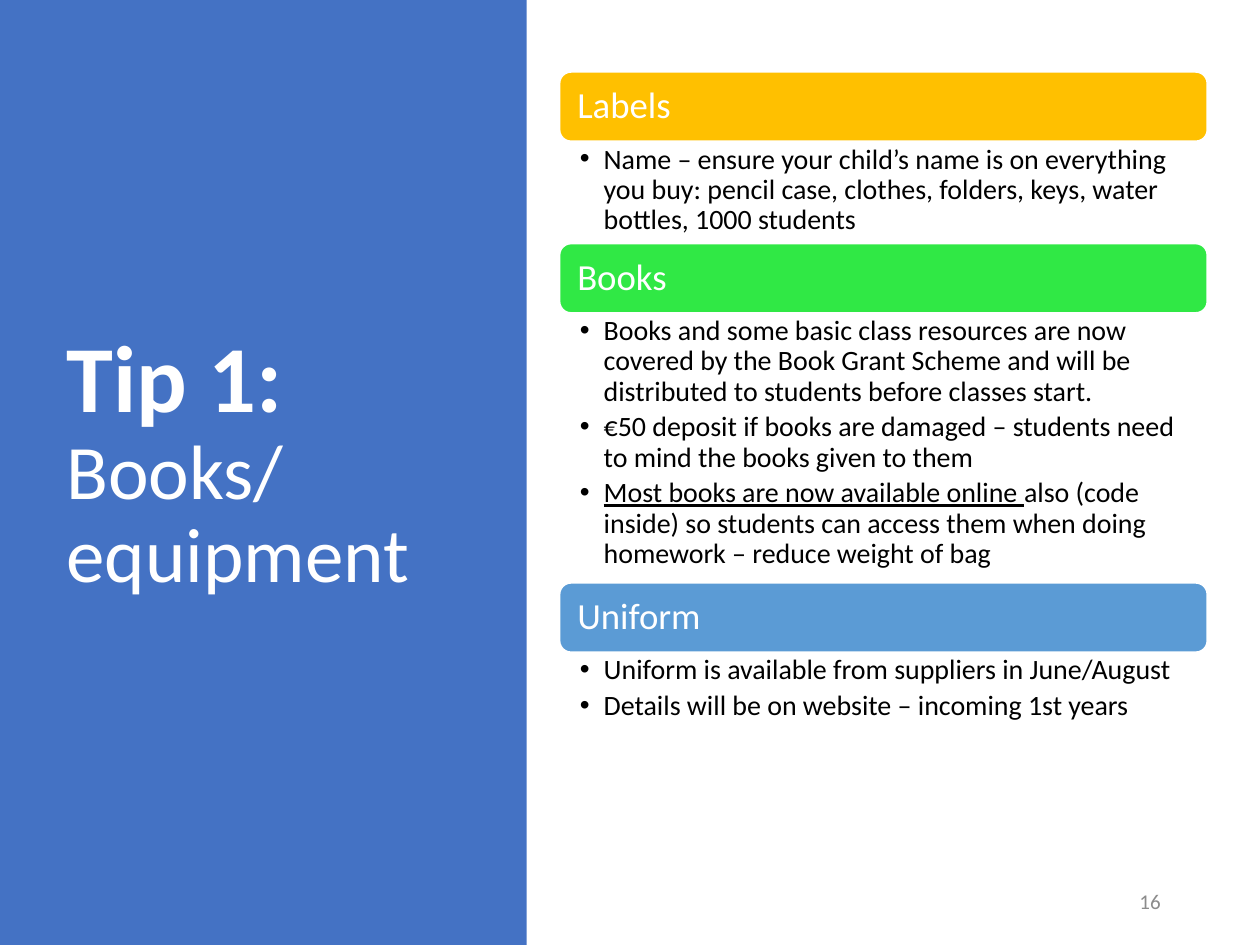
from pptx import Presentation
from pptx.dml.color import RGBColor
from pptx.enum.shapes import MSO_SHAPE
from pptx.enum.text import MSO_ANCHOR, MSO_AUTO_SIZE, PP_ALIGN
from pptx.oxml.ns import qn
from pptx.util import Cm, Pt
from lxml.etree import SubElement

FONT = "Calibri"
WHITE = RGBColor(0xFF, 0xFF, 0xFF)
BLACK = RGBColor(0x00, 0x00, 0x00)
GREY = RGBColor(0x8C, 0x8C, 0x8C)
PANEL_BLUE = RGBColor(0x44, 0x72, 0xC4)
AMBER = RGBColor(0xFF, 0xC0, 0x00)
GREEN = RGBColor(0x30, 0xE8, 0x45)
SKY_BLUE = RGBColor(0x5B, 0x9B, 0xD5)

HEADING_HEIGHT = Cm(1.4)
SECTIONS = [
    ("Labels", AMBER, Cm(2.06), [
        [("Name – ensure your child’s name is on everything you buy: pencil case, "
          "clothes, folders, keys, water bottles, 1000 students", False)],
    ]),
    ("Books", GREEN, Cm(5.44), [
        [("Books and some basic class resources are now covered by the Book Grant "
          "Scheme and will be distributed to students before classes start.", False)],
        [("€50 deposit if books are damaged – students need to mind the books "
          "given to them", False)],
        [("Most books are now available online ", True),
         ("also (code inside) so students can access them when doing homework – "
          "reduce weight of bag", False)],
    ]),
    ("Uniform", SKY_BLUE, Cm(3.07), [
        [("Uniform is available from suppliers in June/August", False)],
        [("Details will be on website – incoming 1st years", False)],
    ]),
]


def place(shape, left, top, width, height):
    shape.left, shape.top, shape.width, shape.height = left, top, width, height


def set_frame(frame, anchor, side, edge):
    frame.word_wrap = True
    frame.auto_size = MSO_AUTO_SIZE.NONE
    frame.vertical_anchor = anchor
    frame.margin_left = frame.margin_right = side
    frame.margin_top = frame.margin_bottom = edge


def add_run(paragraph, text, size, color, bold=False, underline=False):
    run = paragraph.add_run()
    run.text = text
    run.font.name = FONT
    run.font.size = Pt(size)
    run.font.bold = bold
    run.font.underline = underline
    run.font.color.rgb = color


def add_block(slide, preset, color, left, top, width, height):
    block = slide.shapes.add_shape(preset, left, top, width, height)
    block.shadow.inherit = False
    block.fill.solid()
    block.fill.fore_color.rgb = color
    return block


def add_title_panel(slide, left, top, width, height):
    panel = add_block(slide, MSO_SHAPE.RECTANGLE, PANEL_BLUE, left, top, width, height)
    panel.line.fill.background()
    panel.element.getparent().insert(2, panel.element)

    title = slide.shapes.title
    place(title, left + Cm(1.09), top + Cm(1.73), width - Cm(1.63), height - Cm(3.76))
    set_frame(title.text_frame, MSO_ANCHOR.MIDDLE, Cm(0.25), Cm(0.13))
    paragraph = title.text_frame.paragraphs[0]
    paragraph.alignment = PP_ALIGN.LEFT
    paragraph.line_spacing = 0.9
    add_run(paragraph, "Tip 1: ", 54, WHITE, bold=True)
    add_run(paragraph, "Books/", 44, WHITE)
    paragraph.add_line_break()
    add_run(paragraph, "equipment", 44, WHITE)


def add_heading(slide, text, color, left, top, width, height):
    heading = add_block(slide, MSO_SHAPE.ROUNDED_RECTANGLE, color, left, top, width, height)
    heading.line.color.rgb = WHITE
    heading.line.width = Pt(1)
    set_frame(heading.text_frame, MSO_ANCHOR.MIDDLE, Cm(0.29), Cm(0.1))
    paragraph = heading.text_frame.paragraphs[0]
    paragraph.alignment = PP_ALIGN.LEFT
    paragraph.line_spacing = 0.9
    add_run(paragraph, text, 21, WHITE)


def fill_list(body, items, left, top, width, height):
    place(body, left, top, width, height)
    frame = body.text_frame
    set_frame(frame, MSO_ANCHOR.TOP, Cm(0.41), Cm(0.07))
    for index, runs in enumerate(items):
        paragraph = frame.add_paragraph() if index else frame.paragraphs[0]
        properties = paragraph._p.get_or_add_pPr()
        properties.set("marL", str(Cm(0.48)))
        properties.set("indent", str(-Cm(0.48)))
        SubElement(properties, qn("a:buFont"), typeface="Arial")
        SubElement(properties, qn("a:buChar"), char="•")
        paragraph.line_spacing = 0.9
        paragraph.space_before = Pt(0)
        paragraph.space_after = Pt(3.2)
        for text, underline in runs:
            add_run(paragraph, text, 16, BLACK, underline=underline)


def add_sections(slide, left, top, width):
    bodies = list(slide.placeholders)[1:]
    for body, (heading, color, list_height, items) in zip(bodies, SECTIONS):
        add_heading(slide, heading, color, left, top, width, HEADING_HEIGHT)
        top += HEADING_HEIGHT
        fill_list(body, items, left, top, width, list_height)
        top += list_height
    for unused in bodies[len(SECTIONS):]:
        unused.element.getparent().remove(unused.element)


def add_page_number(slide, left, top, width, height):
    box = slide.shapes.add_textbox(left, top, width, height)
    set_frame(box.text_frame, MSO_ANCHOR.MIDDLE, Cm(0.25), Cm(0.13))
    paragraph = box.text_frame.paragraphs[0]
    paragraph.alignment = PP_ALIGN.RIGHT
    paragraph.space_after = Pt(6)
    add_run(paragraph, "16", 12, GREY)


def main():
    presentation = Presentation()
    presentation.slide_width = Cm(25.4)
    presentation.slide_height = Cm(19.05)
    comparison_layout = presentation.slide_layouts[4]
    slide = presentation.slides.add_slide(comparison_layout)
    add_title_panel(slide, Cm(0), Cm(0), Cm(10.62), presentation.slide_height)
    add_sections(slide, Cm(11.28), Cm(1.45), Cm(13.06))
    add_page_number(slide, Cm(17.93), Cm(17.65), Cm(5.72), Cm(1.02))
    presentation.save("out.pptx")


if __name__ == "__main__":
    main()
